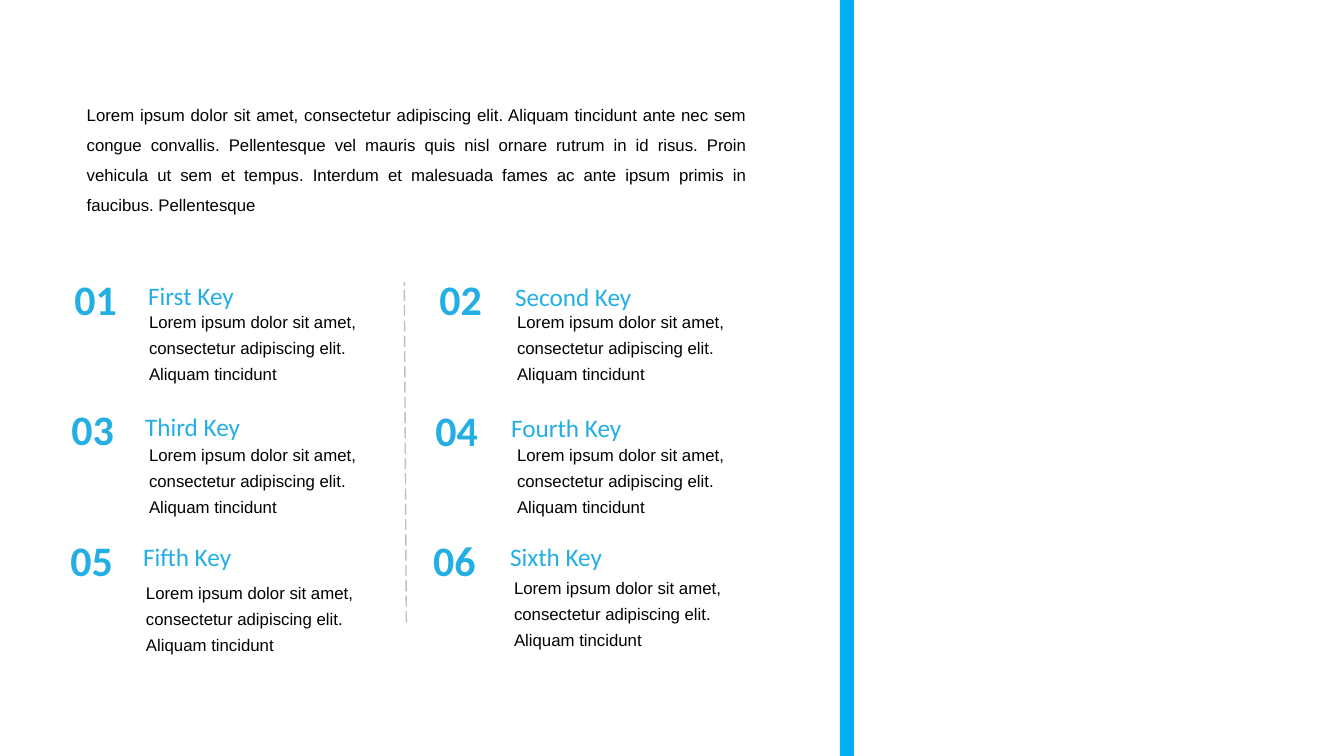
from lxml.etree import SubElement
from pptx import Presentation
from pptx.dml.color import RGBColor
from pptx.enum.dml import MSO_LINE as Dash
from pptx.enum.shapes import MSO_CONNECTOR as Conn, MSO_SHAPE as Shape
from pptx.enum.text import MSO_ANCHOR as Anchor, MSO_AUTO_SIZE as Fit, PP_ALIGN as Align
from pptx.oxml.ns import qn
from pptx.util import Inches, Pt

BLACK = RGBColor(0x00, 0x00, 0x00)
SKY = RGBColor(0x24, 0xAF, 0xE4)
BAR = RGBColor(0x00, 0xB0, 0xF0)
GREY = RGBColor(0xBF, 0xBF, 0xBF)

INTRO = (
    "Lorem ipsum dolor sit amet, consectetur adipiscing elit. Aliquam tincidunt "
    "ante nec sem congue convallis. Pellentesque vel mauris quis nisl ornare rutrum "
    "in id risus. Proin vehicula ut sem et tempus. Interdum et malesuada fames ac "
    "ante ipsum primis in faucibus. Pellentesque"
)
BODY = "Lorem ipsum dolor sit amet, consectetur adipiscing elit. Aliquam tincidunt"

KEYS = [
    ("First Key", (0.52, 2.66), (1.37, 2.78), (1.38, 3.04)),
    ("Second Key", (4.14, 2.66), (5.01, 2.79), (5.03, 3.04)),
    ("Third Key", (0.49, 3.95), (1.34, 4.08), (1.38, 4.36)),
    ("Fourth Key", (4.1, 3.96), (4.97, 4.09), (5.03, 4.36)),
    ("Fifth Key", (0.48, 5.25), (1.32, 5.37), (1.35, 5.73)),
    ("Sixth Key", (4.08, 5.25), (4.96, 5.37), (5, 5.68)),
]


class Deck:
    """Holds the style and the current slide, and draws each kind of element."""

    def __init__(self):
        self.prs = Presentation()
        self.prs.slide_width = Inches(13.33)
        self.prs.slide_height = Inches(7.5)
        self.slide = self.prs.slides.add_slide(self.prs.slide_layouts[6])
        self.shapes = self.slide.shapes

    def text(self, text, spot, size, pads, anchor=Anchor.MIDDLE, align=Align.LEFT,
             lead=1.0, points=12, face="Arial", color=BLACK, bold=False):
        box = self.shapes.add_textbox(*map(Inches, spot + size))
        frame = box.text_frame
        frame.word_wrap = True
        frame.auto_size = Fit.SHAPE_TO_FIT_TEXT
        frame.vertical_anchor = anchor
        frame.margin_left, frame.margin_top, frame.margin_right, frame.margin_bottom = map(Inches, pads)
        para = frame.paragraphs[0]
        para.text = text
        para.alignment = align
        para.line_spacing = lead
        font = para.font
        font.name, font.size, font.bold = face, Pt(points), bold
        font.color.rgb = color

    def key(self, num, name, mark, head, body):
        self.text(f"{num:02d} ", mark, (0.95, 0.61), (0.1, 0.05, 0.1, 0.05),
                  align=Align.CENTER, points=30, face="Calibri", color=SKY, bold=True)
        self.text(name, head, (2.72, 0.35), (0.1, 0, 0.1, 0.05),
                  anchor=Anchor.TOP, points=18, face="Calibri", color=SKY)
        self.text(BODY, body, (2.4, 0.76), (0.1, 0, 0, 0), lead=1.3)

    def rule(self, start, end):
        line = self.shapes.add_connector(Conn.STRAIGHT, *map(Inches, start + end))
        line.line.color.rgb = GREY
        line.line.width = Pt(1)
        line.line.dash_style = Dash.LONG_DASH
        SubElement(line.element.spPr, qn("a:effectLst"))

    def bar(self, spot, size):
        bar = self.shapes.add_shape(Shape.RECTANGLE, *map(Inches, spot + size))
        bar.shadow.inherit = False
        bar.fill.solid()
        bar.fill.fore_color.rgb = BAR
        bar.line.fill.background()


def main():
    deck = Deck()
    deck.text(INTRO, (0.73, 0.88), (6.81, 1.31), (0.13, 0.07, 0.13, 0.07),
              align=Align.JUSTIFY, lead=1.5)
    for num, key in enumerate(KEYS, 1):
        deck.key(num, *key)
    deck.rule((4.03, 6.17), (4.01, 2.8))
    deck.bar((8.33, 0), (0.14, 7.5))
    deck.prs.save("out.pptx")


if __name__ == "__main__":
    main()
